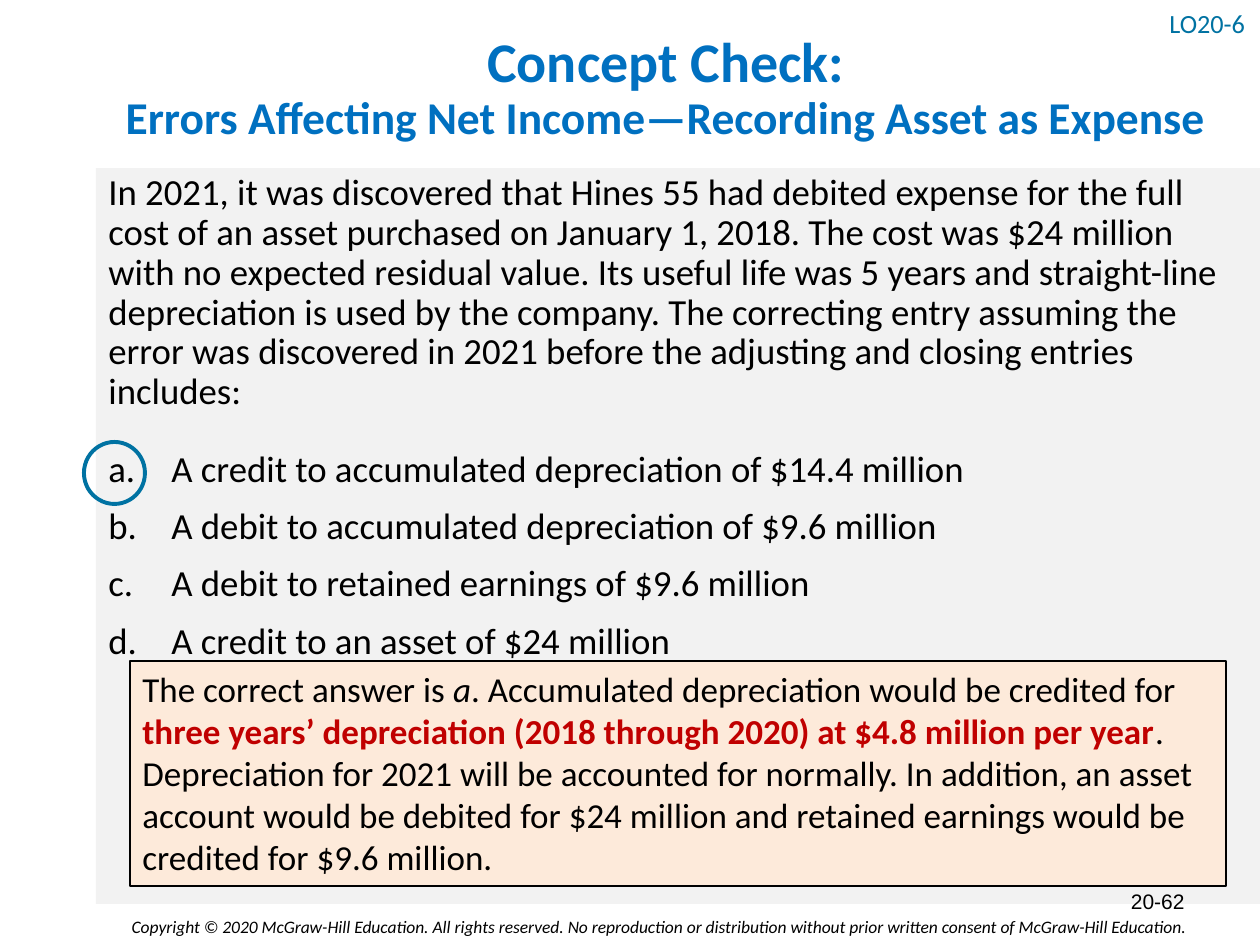
from lxml import etree
from pptx import Presentation
from pptx import util as u
from pptx.dml.color import RGBColor
from pptx.enum import shapes, text
from pptx.oxml.ns import qn

PX = 914400 / 126
COLORS = {
    "black": "000000", "title": "0070C0", "accent": "0072A2",
    "panel": "F2F2F2", "answer": "FDEADA", "key": "C00000",
}
TOP, MIDDLE = text.MSO_ANCHOR.TOP, text.MSO_ANCHOR.MIDDLE
CENTER, RIGHT = text.PP_ALIGN.CENTER, text.PP_ALIGN.RIGHT


def px(n):
    return u.Emu(round(n * PX))


def rgb(name):
    return RGBColor.from_string(COLORS[name])


def add_run(p, words, size, color="black", font="Calibri", bold=False, italic=False):
    r = p.add_run()
    r.text = words
    r.font.name, r.font.size = font, u.Pt(size)
    r.font.bold, r.font.italic = bold, italic
    r.font.color.rgb = rgb(color)


def number_by_letter(p, indent):
    """Give the paragraph an automatic a., b., c. number with a hanging indent."""
    pPr = p._p.get_or_add_pPr()
    pPr.set("marL", str(indent))
    pPr.set("indent", str(-indent))
    etree.SubElement(pPr, qn("a:buFont"), typeface="+mj-lt")
    etree.SubElement(pPr, qn("a:buAutoNum"), type="alphaLcPeriod")


class Deck:
    def __init__(self, prs):
        self.s = prs.slides.add_slide(prs.slide_layouts[6])

    def frame(self, sp, anchor=TOP):
        tf = sp.text_frame
        tf.word_wrap = True
        tf.vertical_anchor = anchor
        return tf

    def text(self, box, anchor=TOP, align=None, spacing=None):
        """Add a text box and return its first paragraph."""
        p = self.frame(self.s.shapes.add_textbox(*map(px, box)), anchor).paragraphs[0]
        p.alignment, p.line_spacing = align, spacing
        return p

    def shape(self, kind, box, fill=None, line=None, width=1):
        sp = self.s.shapes.add_shape(kind, *map(px, box))
        sp.shadow.inherit = False
        if fill:
            sp.fill.solid()
            sp.fill.fore_color.rgb = rgb(fill)
        else:
            sp.fill.background()
        if line:
            sp.line.color.rgb = rgb(line)
            sp.line.width = u.Pt(width)
        else:
            sp.line.fill.background()
        return sp

    def question(self, box, stem, choices):
        tf = self.frame(self.shape(shapes.MSO_SHAPE.RECTANGLE, box, "panel"))
        for i, words in enumerate([stem, *choices]):
            p = tf.add_paragraph() if i else tf.paragraphs[0]
            p.alignment = text.PP_ALIGN.LEFT
            p.line_spacing = 0.9
            if i:
                p.space_before = u.Pt(10)
                number_by_letter(p, px(63))
            else:
                p.space_after = u.Pt(12)
            add_run(p, words, 21)

    def answer(self, box, parts):
        sp = self.shape(shapes.MSO_SHAPE.RECTANGLE, box, "answer", "black")
        p = self.frame(sp).paragraphs[0]
        p.alignment = text.PP_ALIGN.LEFT
        for words, style in parts:
            add_run(p, words, 20, **style)


def main():
    prs = Presentation()
    prs.slide_width, prs.slide_height = px(1260), px(945)
    deck = Deck(prs)

    p = deck.text((53, 910, 1145, 34), align=RIGHT)
    add_run(p, "Copyright © 2020 McGraw-Hill Education. All rights reserved. No reproduction "
               "or distribution without prior written consent of McGraw-Hill Education.",
            10, italic=True)

    p = deck.text((99, 24, 1134, 130), MIDDLE, CENTER, 0.9)
    add_run(p, "Concept Check:", 32, "title", bold=True)
    p.add_line_break()
    add_run(p, "Errors Affecting Net Income—Recording Asset as Expense", 26, "title", bold=True)

    deck.question(
        (96, 168, 1164, 736),
        "In 2021, it was discovered that Hines 55 had debited expense for the full cost of an "
        "asset purchased on January 1, 2018. The cost was $24 million with no expected residual "
        "value. Its useful life was 5 years and straight-line depreciation is used by the "
        "company. The correcting entry assuming the error was discovered in 2021 before the "
        "adjusting and closing entries includes:",
        ["A credit to accumulated depreciation of $14.4 million",
         "A debit to accumulated depreciation of $9.6 million",
         "A debit to retained earnings of $9.6 million",
         "A credit to an asset of $24 million"])
    deck.shape(shapes.MSO_SHAPE.OVAL, (84, 442, 61, 62), line="accent", width=2.25)

    deck.answer((130, 661, 1096, 225), [
        ("The correct answer is ", {}),
        ("a", {"italic": True}),
        (". Accumulated depreciation would be credited for ", {}),
        ("three years’ depreciation (2018 through 2020) at $4.8 million per year",
         {"color": "key", "bold": True}),
        (". Depreciation for 2021 will be accounted for normally. In addition, an asset account "
         "would be debited for $24 million and retained earnings would be credited for "
         "$9.6 million.", {})])

    add_run(deck.text((1157, 0, 102, 50), MIDDLE, spacing=0.9), "LO20-6", 15, "accent")
    add_run(deck.text((903, 876, 294, 50), MIDDLE, RIGHT), "20-62", 12, font="Arial")
    prs.save("out.pptx")


if __name__ == "__main__":
    main()
